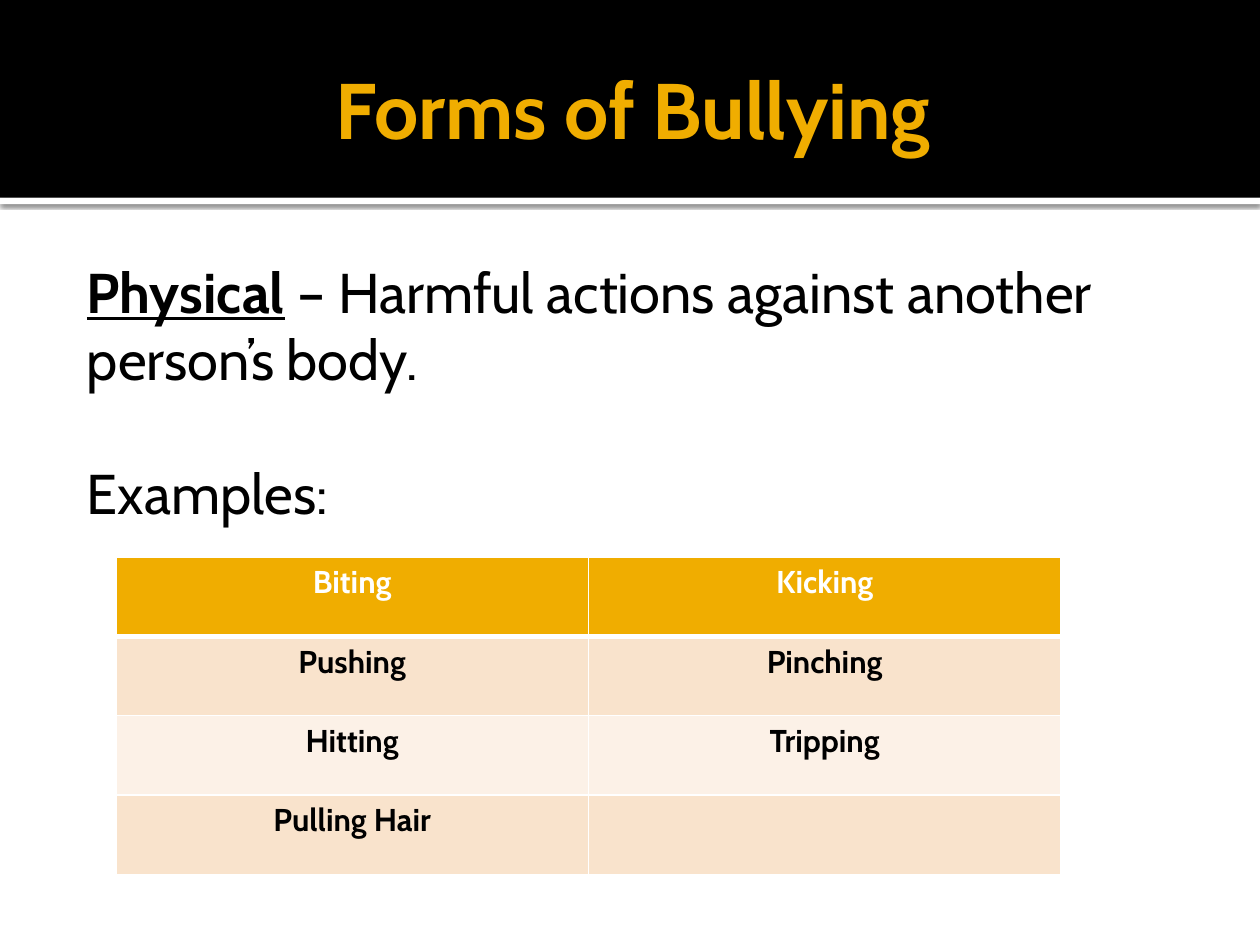
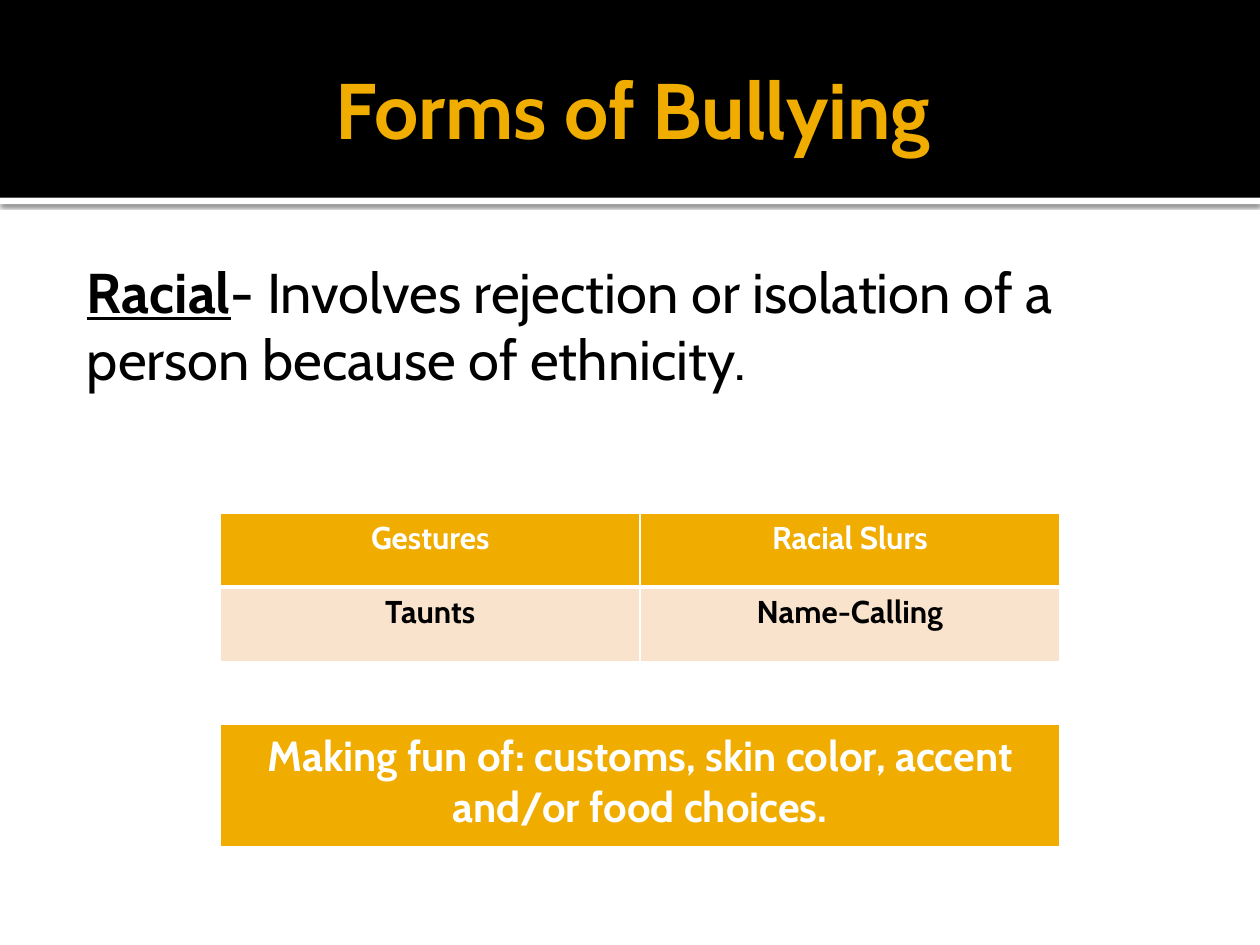
from dataclasses import dataclass

from lxml.etree import SubElement
from pptx import Presentation
from pptx.dml.color import RGBColor
from pptx.enum.shapes import MSO_SHAPE
from pptx.enum.text import MSO_ANCHOR, PP_ALIGN
from pptx.oxml import parse_xml
from pptx.oxml.ns import nsdecls, qn
from pptx.util import Inches, Pt

FONT = "Cabin"
BLACK, WHITE, GOLD = "000000", "FFFFFF", "F0AD00"
BANDS = ("F9E3CC", "FCF1E7")
TITLE = "Forms of Bullying"
BAND_HEIGHT = 1.57
THIN, THICK = 1, 3


@dataclass
class Grid:
    left: float
    top: float
    width: float
    row_height: float
    rows: list[tuple[str, ...]]
    size: int = 18


@dataclass
class Lesson:
    term: str
    definition: str
    grids: list[Grid]
    lead_in: str = ""


LESSONS = [
    Lesson(
        "Physical",
        " – Harmful actions against another person’s body.",
        [Grid(0.92, 4.42, 7.5, 0.63, [
            ("Biting", "Kicking"),
            ("Pushing", "Pinching"),
            ("Hitting", "Tripping"),
            ("Pulling Hair", ""),
        ])],
        lead_in="Examples:",
    ),
    Lesson(
        "Racial",
        "- Involves rejection or isolation of a person because of ethnicity.",
        [
            Grid(1.75, 4.07, 6.66, 0.59, [
                ("Gestures", "Racial Slurs"),
                ("Taunts", "Name-Calling"),
            ]),
            Grid(1.75, 5.75, 6.66, 0.98, [
                ("Making fun of: customs, skin color, accent and/or food choices.",),
            ], size=24),
        ],
    ),
]


def color(value: str) -> RGBColor:
    return RGBColor.from_string(value)


def style(font, size: int, tint: str, bold: bool | None = None) -> None:
    font.name, font.size, font.bold = FONT, Pt(size), bold
    font.color.rgb = color(tint)


def add_bar(page, top: float, height: float, tint: str):
    bar = page.shapes.add_shape(
        MSO_SHAPE.RECTANGLE, 0, Inches(top), Inches(10), Inches(height))
    bar.shadow.inherit = False
    bar.fill.solid()
    bar.fill.fore_color.rgb = color(tint)
    bar.line.fill.background()
    return bar


def add_shadow(bar) -> None:
    effects = bar._element.spPr.find(qn("a:effectLst"))
    effects.append(parse_xml(
        f'<a:outerShdw {nsdecls("a")} blurRad="{Pt(2.5)}" dist="{Pt(0.8)}" '
        f'dir="5400000" rotWithShape="0"><a:srgbClr val="{BLACK}">'
        '<a:alpha val="60000"/></a:srgbClr></a:outerShdw>'))


def add_text_frame(page, top: float, height: float, insets: tuple[float, ...]):
    box = page.shapes.add_textbox(Inches(0.5), Inches(top), Inches(9), Inches(height))
    frame = box.text_frame
    frame.word_wrap = True
    frame.margin_left, frame.margin_top, frame.margin_right, frame.margin_bottom = (
        Inches(inset) for inset in insets)
    return frame


def add_header(page) -> None:
    add_shadow(add_bar(page, BAND_HEIGHT, 0.05, WHITE))
    add_bar(page, 0, BAND_HEIGHT, BLACK)
    frame = add_text_frame(page, 0.17, 1.37, (0.1, 0.05, 0.05, 0.05))
    frame.vertical_anchor = MSO_ANCHOR.MIDDLE
    para = frame.paragraphs[0]
    para.text, para.alignment = TITLE, PP_ALIGN.CENTER
    style(para.font, 45, GOLD, bold=True)


def add_definition(page, lesson: Lesson) -> None:
    frame = add_text_frame(page, 1.94, 5.06, (0.06, 0.1, 0.1, 0.05))
    para = frame.paragraphs[0]
    term = para.add_run()
    term.text = lesson.term
    term.font.bold = term.font.underline = True
    para.add_run().text = lesson.definition
    if lesson.lead_in:
        lead_in = frame.add_paragraph()
        lead_in.text = lesson.lead_in
        lead_in.space_before = Pt(38.4)
    for para in frame.paragraphs:
        style(para.font, 32, BLACK)
        properties = para._p.get_or_add_pPr()
        properties.set("marL", str(Inches(0.13)))
        properties.set("indent", "0")


def set_borders(cell, top: int, bottom: int) -> None:
    widths = {"lnL": THIN, "lnR": THIN, "lnT": top, "lnB": bottom}
    properties = cell._tc.get_or_add_tcPr()
    for position, (side, width) in enumerate(widths.items()):
        line = SubElement(properties, qn(f"a:{side}"), w=str(Pt(width)))
        fill = SubElement(line, qn("a:solidFill"))
        SubElement(fill, qn("a:srgbClr"), val=WHITE)
        properties.insert(position, line)  # borders come before the fill


def add_grid(page, grid: Grid) -> None:
    row_count, column_count = len(grid.rows), len(grid.rows[0])
    table = page.shapes.add_table(
        row_count, column_count, Inches(grid.left), Inches(grid.top),
        Inches(grid.width), Inches(grid.row_height * row_count)).table
    table.first_row = table.horz_banding = False
    for row, texts in enumerate(grid.rows):
        is_header = row == 0
        for column, text in enumerate(texts):
            cell = table.cell(row, column)
            cell.fill.solid()
            cell.fill.fore_color.rgb = color(GOLD if is_header else BANDS[(row - 1) % 2])
            set_borders(cell, THICK if row == 1 else THIN, THICK if is_header else THIN)
            para = cell.text_frame.paragraphs[0]
            para.text, para.alignment = text, PP_ALIGN.CENTER
            style(para.font, grid.size, WHITE if is_header else BLACK, bold=True)


def main() -> None:
    deck = Presentation()
    deck.slide_width, deck.slide_height = Inches(10), Inches(7.5)
    for lesson in LESSONS:
        page = deck.slides.add_slide(deck.slide_layouts[6])
        add_header(page)
        add_definition(page, lesson)
        for grid in lesson.grids:
            add_grid(page, grid)
    deck.save("out.pptx")


if __name__ == "__main__":
    main()
